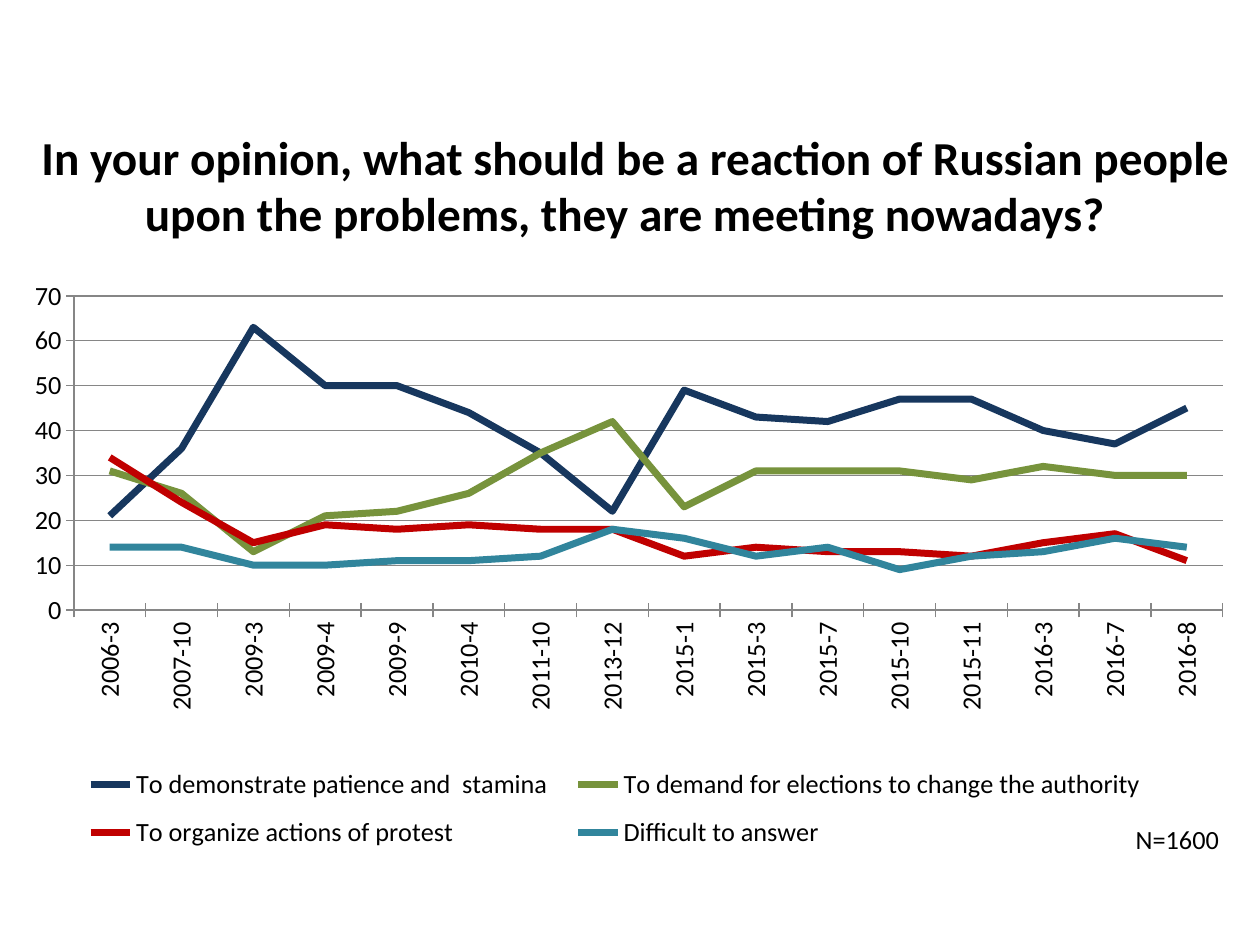
from lxml import etree
from pptx import Presentation
from pptx.chart.data import CategoryChartData
from pptx.dml.color import RGBColor
from pptx.enum import chart as ch, text
from pptx.oxml.ns import qn
from pptx.util import Pt

FONT = "Calibri"
GREY = "868686"


def rgb(value):
    return RGBColor.from_string(value)


def write(sp, content, size, bold=False, color="000000", wrap=True):
    """Fill a shape with one centred, formatted paragraph."""
    tf = sp.text_frame
    tf.word_wrap = wrap
    tf.vertical_anchor = text.MSO_ANCHOR.MIDDLE
    p = tf.paragraphs[0]
    p.alignment = text.PP_ALIGN.CENTER
    r = p.add_run()
    r.text = content
    r.font.name, r.font.size, r.font.bold = FONT, Pt(size), bold
    r.font.color.rgb = rgb(color)


prs = Presentation()
prs.slide_width, prs.slide_height = Pt(720), Pt(540)
s = prs.slides.add_slide(prs.slide_layouts[5])

# Title
title = s.shapes.title
title.left, title.top, title.width, title.height = Pt(0), Pt(71.3), Pt(720), Pt(68.4)
write(title, " In your opinion, what should be a reaction of Russian people "
      "upon the problems, they are meeting nowadays? ", 27, bold=True)

# Sample size
note = s.shapes.add_textbox(Pt(641.5), Pt(466.6), Pt(62.6), Pt(25.2))
note.text_frame.auto_size = text.MSO_AUTO_SIZE.SHAPE_TO_FIT_TEXT
write(note, "N=1600", 15, wrap=False)

# Survey answers over time
answers = [
    ("To demonstrate patience and  stamina", "17375E",
     [21, 36, 63, 50, 50, 44, 35, 22, 49, 43, 42, 47, 47, 40, 37, 45]),
    ("To demand for elections to change the authority ", "77933C",
     [31, 26, 13, 21, 22, 26, 35, 42, 23, 31, 31, 31, 29, 32, 30, 30]),
    ("To organize actions of protest", "C00000",
     [34, 24, 15, 19, 18, 19, 18, 18, 12, 14, 13, 13, 12, 15, 17, 11]),
    ("Difficult to answer ", "31859C",
     [14, 14, 10, 10, 11, 11, 12, 18, 16, 12, 14, 9, 12, 13, 16, 14]),
]
data = CategoryChartData()
data.categories = ["2006-3", "2007-10", "2009-3", "2009-4", "2009-9", "2010-4",
                   "2011-10", "2013-12", "2015-1", "2015-3", "2015-7", "2015-10",
                   "2015-11", "2016-3", "2016-7", "2016-8"]
for name, _, values in answers:
    data.add_series(name, values)

chart = s.shapes.add_chart(ch.XL_CHART_TYPE.LINE, Pt(11.5), Pt(157.7),
                           Pt(697.7), Pt(336.2), data).chart
chart.has_title = False
chart.font.name, chart.font.size = FONT, Pt(10)
chart.font.color.rgb = rgb("000000")

plot = chart.plots[0]
plot.vary_by_categories = False
for series, (_, color, _) in zip(plot.series, answers):
    series.smooth = False
    series.marker.style = ch.XL_MARKER_STYLE.NONE
    series.format.line.width = Pt(4)
    series.format.line.color.rgb = rgb(color)

dates, percent = chart.category_axis, chart.value_axis
percent.minimum_scale, percent.maximum_scale, percent.major_unit = 0, 70, 10
percent.has_major_gridlines = True
for axis in (dates, percent):
    axis.major_tick_mark = ch.XL_TICK_MARK.CROSS
    axis.minor_tick_mark = ch.XL_TICK_MARK.NONE
    axis.tick_labels.font.size = Pt(15)
for line in (dates.format.line, percent.format.line, percent.major_gridlines.format.line):
    line.width = Pt(0.75)
    line.color.rgb = rgb(GREY)
dates_body = dates._element.find(qn("c:txPr")).find(qn("a:bodyPr"))
dates_body.set("rot", "-5400000")
dates_body.set("vert", "horz")

chart.has_legend = True
legend = chart.legend
legend.position = ch.XL_LEGEND_POSITION.BOTTOM
legend.include_in_layout = False
legend.font.size = Pt(15)

# Fixed places for plot and legend, as fractions of the chart
plot_area = chart._chartSpace.chart.plotArea
for parent, index, inner, box in (
        (plot_area, 0, True, (0.044, 0.034, 0.941, 0.534)),
        (legend._element, 1, False, (0.04, 0.81, 0.9, 0.19))):
    for old in parent.findall(qn("c:layout")):
        parent.remove(old)
    layout = etree.Element(qn("c:layout"))
    parent.insert(index, layout)
    manual = etree.SubElement(layout, qn("c:manualLayout"))
    settings = [("layoutTarget", "inner")] if inner else []
    settings += [("xMode", "edge"), ("yMode", "edge"), *zip("xywh", box)]
    for tag, value in settings:
        etree.SubElement(manual, qn(f"c:{tag}")).set("val", str(value))

prs.save("out.pptx")
